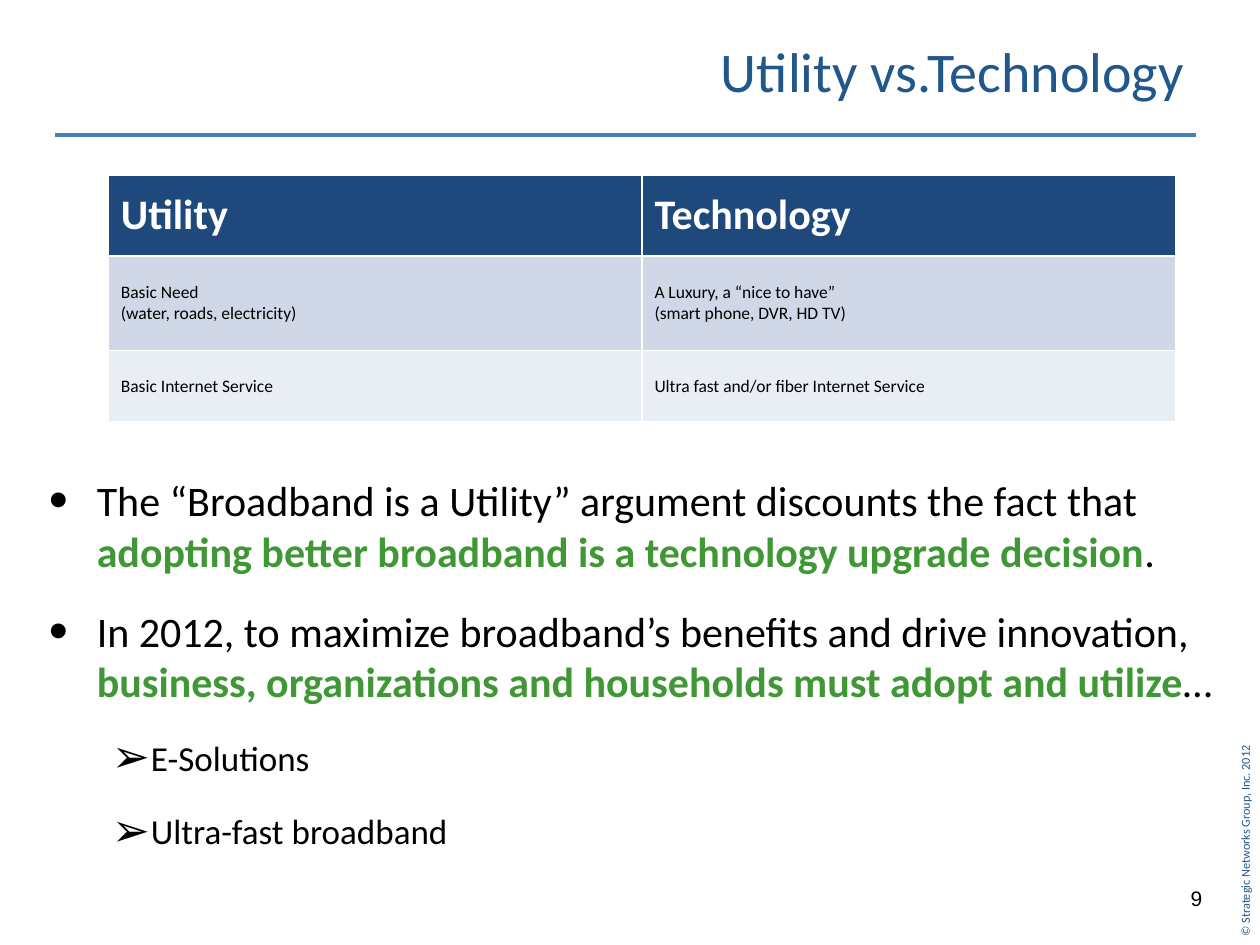
"""Build the "Utility vs.Technology" slide."""
import pptx
import pptx.dml.color
import pptx.enum.shapes
import pptx.enum.text
import pptx.oxml.ns
import pptx.util
from lxml import etree
from pptx.util import Inches, Pt

ANCHOR = pptx.enum.text.MSO_ANCHOR
ALIGN = pptx.enum.text.PP_ALIGN


def color(value):
    return pptx.dml.color.RGBColor.from_string(value)


def style(font, size, value, bold=False, name="Calibri"):
    font.name, font.size, font.bold = name, Pt(size), bold
    font.color.rgb = color(value)


deck = pptx.Presentation()
deck.slide_width, deck.slide_height = Inches(10), Inches(7.5)
page = deck.slides.add_slide(deck.slide_layouts[5])

rule = page.shapes.add_connector(
    pptx.enum.shapes.MSO_CONNECTOR.STRAIGHT,
    Inches(0.44), Inches(1.07), Inches(9.49), Inches(1.07))
rule.line.color.rgb = color("4A7EBB")
rule.line.width = Pt(2.25)
etree.SubElement(rule._element.spPr, pptx.oxml.ns.qn("a:effectLst"))

title = page.shapes.title
title.left, title.top = Inches(3.1), Inches(0.26)
title.width, title.height = Inches(6.4), Inches(0.71)
title.text_frame.text = "Utility vs.Technology"
title.text_frame.vertical_anchor = ANCHOR.MIDDLE
para = title.text_frame.paragraphs[0]
para.alignment = ALIGN.RIGHT
para.line_spacing = 0.75
style(para.runs[0].font, 32, "21578A")

notice = page.shapes.add_textbox(Inches(8.99), Inches(6.47), Inches(1.78), Inches(0.26))
notice.rotation = 270
frame = notice.text_frame
frame.word_wrap = True
frame.vertical_anchor = ANCHOR.MIDDLE
frame.margin_left = Inches(0.06)
frame.text = "© Strategic Networks Group, Inc. 2012"
style(frame.paragraphs[0].runs[0].font, 7, "21578A")

number = page.shapes.add_textbox(Inches(8.61), Inches(6.98), Inches(1.03), Inches(0.45))
number.text_frame.word_wrap = True
number.text_frame.text = "9"
number.text_frame.paragraphs[0].alignment = ALIGN.RIGHT
style(number.text_frame.paragraphs[0].runs[0].font, 12, "000000", name="Arial")

rows = [
    (0.64, "1F497D", 24, "FFFFFF", True, ["Utility", "Technology"]),
    (0.75, "D0D8E8", 10, "000000", False,
     ["Basic Need\n(water, roads, electricity)",
      "A Luxury, a “nice to have”\n(smart phone, DVR, HD TV)"]),
    (0.57, "E9EDF4", 10, "000000", False,
     ["Basic Internet Service", "Ultra fast and/or fiber Internet Service"]),
]
table = page.shapes.add_table(
    len(rows), 2, Inches(0.86), Inches(1.39), Inches(8.47), Inches(1.96)).table
for row, (height, fill, size, ink, bold, texts) in enumerate(rows):
    table.rows[row].height = Inches(height)
    for column, text in enumerate(texts):
        cell = table.cell(row, column)
        cell.fill.solid()
        cell.fill.fore_color.rgb = color(fill)
        cell.vertical_anchor = ANCHOR.MIDDLE
        cell.text_frame.text = text
        for para in cell.text_frame.paragraphs:
            style(para.runs[0].font, size, ink, bold)

points = [
    (0, "•", 24, 0.38, 0.38, 0, 17,
     ["The “Broadband is a Utility” argument discounts the fact that ",
      "adopting better broadband is a technology upgrade decision", "."]),
    (0, "•", 24, 0.38, 0.38, 0, 11,
     ["In 2012, to maximize broadband’s benefits and drive innovation, ",
      "business, organizations and households must adopt and utilize", "…"]),
    (1, "➢", 20, 0.81, 0.31, 6, 12, ["E-Solutions"]),
    (1, "➢", 20, 0.81, 0.31, 6, 12, ["Ultra-fast broadband"]),
]
body = page.shapes.add_textbox(Inches(0.29), Inches(3.72), Inches(9.56), Inches(3.49))
frame = body.text_frame
frame.word_wrap = True
for index, (level, bullet, size, margin, hanging, before, after, parts) in enumerate(points):
    para = frame.add_paragraph() if index else frame.paragraphs[0]
    properties = para._p.get_or_add_pPr()
    properties.set("marL", str(Inches(margin)))
    properties.set("indent", str(-Inches(hanging)))
    for tag, key, value in (("a:buSzPct", "val", "130000"),
                            ("a:buFont", "typeface", "Arial"),
                            ("a:buChar", "char", bullet)):
        etree.SubElement(properties, pptx.oxml.ns.qn(tag)).set(key, value)
    para.level = level
    para.space_before, para.space_after = Pt(before), Pt(after)
    for position, text in enumerate(parts):
        span = para.add_run()
        span.text = text
        strong = position == 1
        style(span.font, size, "409736" if strong else "000000", strong)

deck.save("out.pptx")
